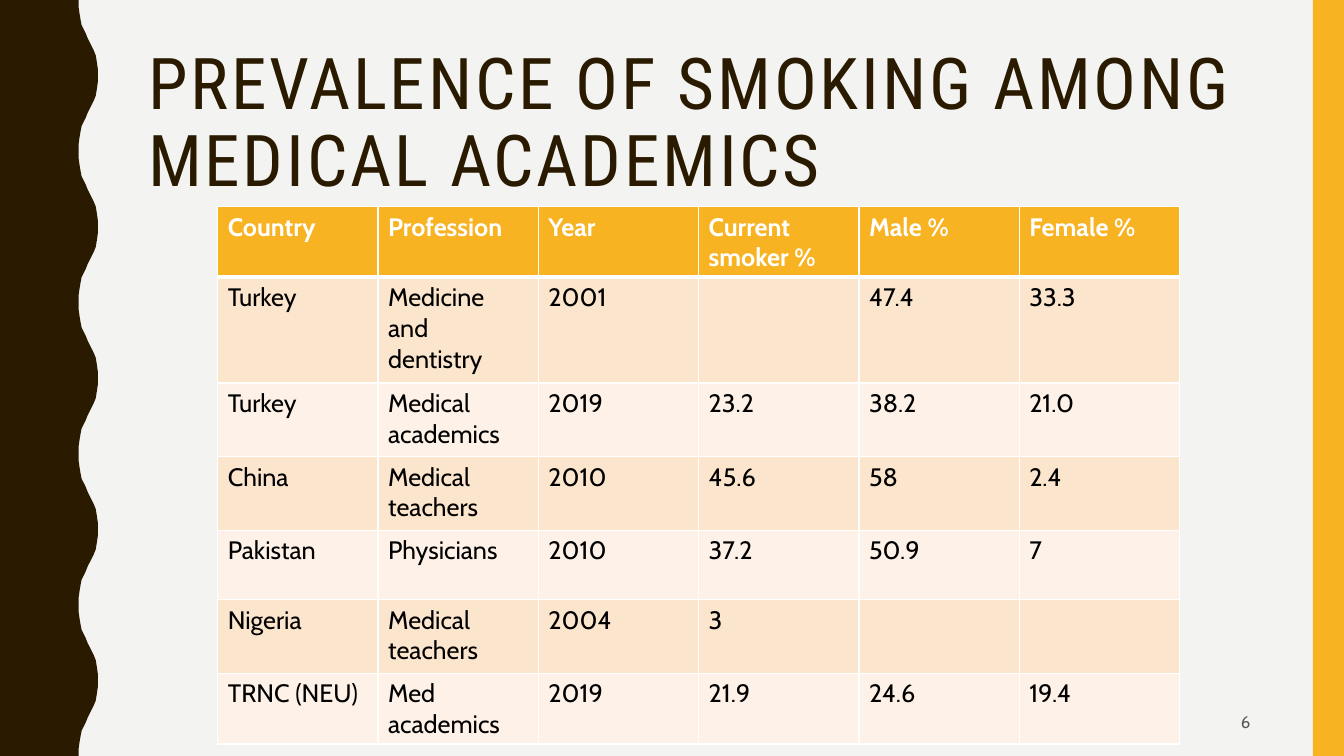
from lxml import etree
from pptx import Presentation
from pptx.dml.color import RGBColor
from pptx.enum.shapes import MSO_SHAPE
from pptx.enum.text import MSO_ANCHOR, PP_ALIGN
from pptx.oxml.ns import qn
from pptx.util import Inches, Pt

RECTANGLE = MSO_SHAPE.RECTANGLE
MIDDLE = MSO_ANCHOR.MIDDLE
LEFT, RIGHT = PP_ALIGN.LEFT, PP_ALIGN.RIGHT

PAPER = RGBColor(0xF3, 0xF3, 0xF2)
BROWN = RGBColor(0x2A, 0x1A, 0x00)
AMBER = RGBColor(0xF8, 0xB3, 0x23)
PEACH = RGBColor(0xFC, 0xE5, 0xCD)
CREAM = RGBColor(0xFE, 0xF2, 0xE8)
WHITE = RGBColor(0xFF, 0xFF, 0xFF)
BLACK = RGBColor(0x00, 0x00, 0x00)
GREY = RGBColor(0x59, 0x59, 0x59)

TITLE_FONT = "Roboto Condensed"
BODY_FONT = "Cabin"

SLIDE_WIDTH, SLIDE_HEIGHT = 13.33, 7.5
WAVE_PERIOD = 1.5
# Outgoing side of one wave, as (x, y) in inches
WAVE_RISE = [
    (0.78, 0), (0.78, 0.07), (0.79, 0.14), (0.8, 0.2), (0.81, 0.25),
    (0.83, 0.29), (0.85, 0.33), (0.87, 0.38), (0.89, 0.42), (0.91, 0.46),
    (0.93, 0.5), (0.95, 0.55), (0.96, 0.61), (0.97, 0.68), (0.97, 0.75),
]

COLUMN_WIDTH = 1.59
ROW_HEIGHTS = [0.69, 1.05, 0.73, 0.73, 0.69, 0.73, 0.69]
SMOKING_ROWS = [
    ["Country", "Profession", "Year", "Current smoker %", "Male %", "Female %"],
    ["Turkey", "Medicine and dentistry", "2001", "", "47.4", "33.3"],
    ["Turkey", "Medical academics", "2019", "23.2", "38.2", "21.0"],
    ["China", "Medical teachers", "2010", "45.6", "58", "2.4"],
    ["Pakistan", "Physicians", "2010", "37.2", "50.9", "7"],
    ["Nigeria", "Medical teachers", "2004", "3", "", ""],
    ["TRNC (NEU)", "Med academics", "2019", "21.9", "24.6", "19.4"],
]


def paint(shape, color):
    shape.fill.solid()
    shape.fill.fore_color.rgb = color
    shape.line.fill.background()
    shape.shadow.inherit = False


def add_run(paragraph, text, font_name, size, color, bold=False):
    run = paragraph.add_run()
    run.text = text
    run.font.name = font_name
    run.font.size = Pt(size)
    run.font.color.rgb = color
    run.font.bold = bold
    return run


def add_wavy_edge(slide):
    fall = [(x, WAVE_PERIOD - y) for x, y in reversed(WAVE_RISE[:-1])]
    wave = WAVE_RISE + fall
    wave_count = round(SLIDE_HEIGHT / WAVE_PERIOD)
    points = [(x, y + WAVE_PERIOD * number)
              for number in range(wave_count) for x, y in wave]
    points.append((0, SLIDE_HEIGHT))
    builder = slide.shapes.build_freeform(0, 0)
    builder.add_line_segments([(Inches(x), Inches(y)) for x, y in points])
    paint(builder.convert_to_shape(), BROWN)


def add_side_bar(slide):
    bar = slide.shapes.add_shape(
        RECTANGLE, Inches(13.02), 0, Inches(0.31), Inches(SLIDE_HEIGHT))
    paint(bar, AMBER)


def add_text(slide, box, text, font_name, size, color, align=LEFT):
    shape = slide.shapes.add_textbox(*[Inches(length) for length in box])
    frame = shape.text_frame
    frame.word_wrap = True
    frame.vertical_anchor = MIDDLE
    paragraph = frame.paragraphs[0]
    paragraph.alignment = align
    run = add_run(paragraph, text, font_name, size, color)
    return paragraph, run


def set_borders(cell, top, bottom):
    properties = cell._tc.get_or_add_tcPr()
    for side, width in (("L", 1), ("R", 1), ("T", top), ("B", bottom)):
        line = etree.SubElement(properties, qn(f"a:ln{side}"), w=str(Pt(width)))
        fill = etree.SubElement(line, qn("a:solidFill"))
        etree.SubElement(fill, qn("a:srgbClr"), val=str(WHITE))


def add_smoking_table(slide):
    row_count, column_count = len(SMOKING_ROWS), len(SMOKING_ROWS[0])
    table = slide.shapes.add_table(
        row_count, column_count, Inches(2.16), Inches(2.05),
        Inches(COLUMN_WIDTH * column_count), Inches(sum(ROW_HEIGHTS))).table
    for column in table.columns:
        column.width = Inches(COLUMN_WIDTH)
    for row_index, texts in enumerate(SMOKING_ROWS):
        table.rows[row_index].height = Inches(ROW_HEIGHTS[row_index])
        is_header = row_index == 0
        band = PEACH if row_index % 2 else CREAM
        for column_index, text in enumerate(texts):
            cell = table.cell(row_index, column_index)
            # A thick rule parts the header from the body
            set_borders(cell, top=3 if row_index == 1 else 1,
                        bottom=3 if is_header else 1)
            cell.fill.solid()
            cell.fill.fore_color.rgb = AMBER if is_header else band
            if text:
                add_run(cell.text_frame.paragraphs[0], text, BODY_FONT, 18,
                        WHITE if is_header else BLACK, bold=is_header)


def main():
    presentation = Presentation()
    presentation.slide_width = Inches(SLIDE_WIDTH)
    presentation.slide_height = Inches(SLIDE_HEIGHT)
    slide = presentation.slides.add_slide(presentation.slide_layouts[6])
    slide.background.fill.solid()
    slide.background.fill.fore_color.rgb = PAPER

    # Side decoration
    add_wavy_edge(slide)
    add_side_bar(slide)

    # Title with spaced letters
    paragraph, run = add_text(
        slide, (1.37, 0.42, 11.13, 1.63),
        "PREVALENCE OF SMOKING AMONG MEDICAL ACADEMICS", TITLE_FONT, 51, BROWN)
    paragraph.line_spacing = 0.9
    run.font._element.set("spc", "200")

    # Table and slide number
    add_smoking_table(slide)
    add_text(slide, (9.42, 6.97, 3.08, 0.38), "6", BODY_FONT, 12, GREY, RIGHT)

    presentation.save("out.pptx")


if __name__ == "__main__":
    main()
